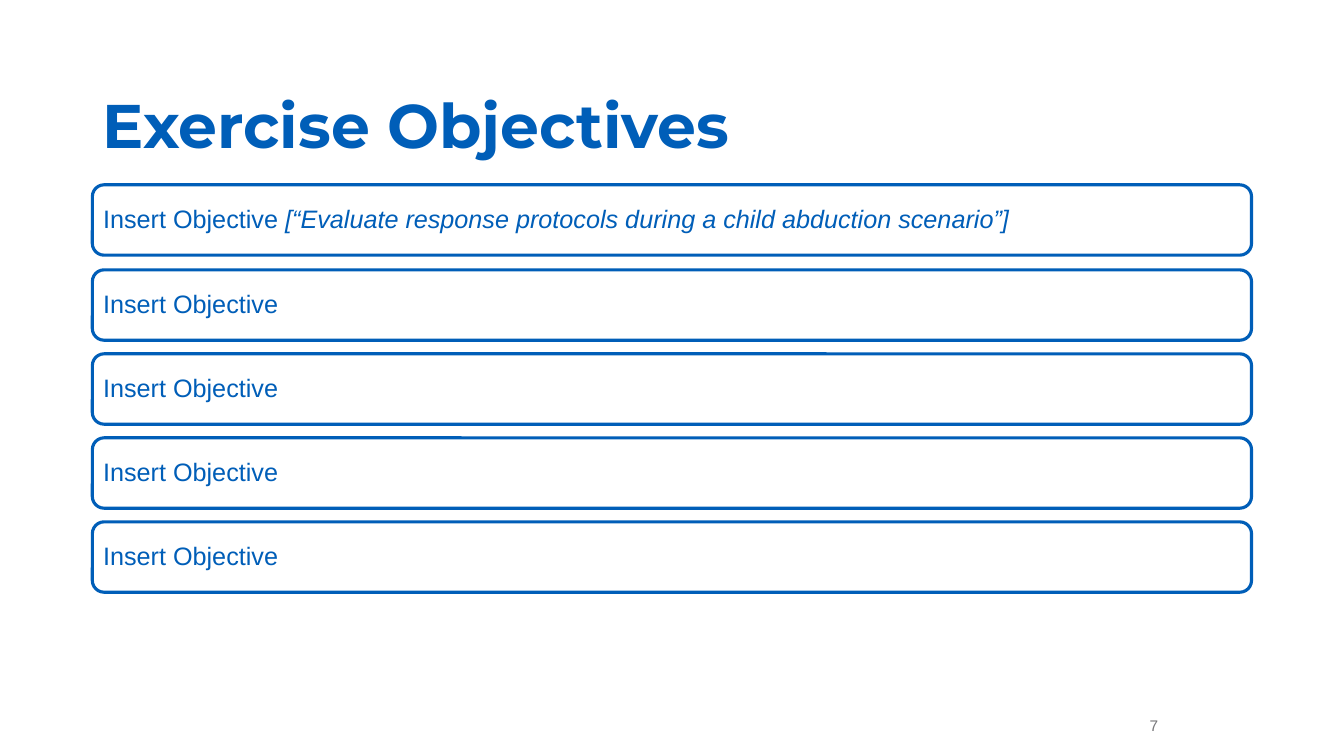
from pptx import Presentation
from pptx.dml.color import RGBColor
from pptx.enum.shapes import MSO_SHAPE as SHAPE
from pptx.enum.text import MSO_ANCHOR as ANCHOR, PP_ALIGN as ALIGN
from pptx.util import Emu, Pt

PX = 9525
BLUE = RGBColor(0x00, 0x5E, 0xB8)
GRAY = RGBColor(0x77, 0x77, 0x7A)
WHITE = RGBColor(0xFF, 0xFF, 0xFF)

LEFT, WIDTH = 88, 1104
FIRST_TOP, SECOND_TOP, PITCH, CARD_HEIGHT = 176, 257, 80, 67
OBJECTIVES = [
    [("Insert Objective ", False),
     ("[“Evaluate response protocols during a child abduction scenario”]", True)],
] + [[("Insert Objective", False)]] * 4


def px(*values):
    return [Emu(v * PX) for v in values]


def add_run(p, text, font, size, color, bold=False, italic=False):
    r = p.add_run()
    r.text = text
    r.font.name = font
    r.font.size = Pt(size)
    r.font.color.rgb = color
    r.font.bold = bold
    r.font.italic = italic


def start_text(sp, align, spacing):
    tf = sp.text_frame
    tf.word_wrap = True
    tf.vertical_anchor = ANCHOR.MIDDLE
    p = tf.paragraphs[0]
    p.alignment = align
    p.line_spacing = spacing
    return p


def add_label(s, box, text, font, size, color, bold=False, align=ALIGN.LEFT, spacing=1.0):
    sp = s.shapes.add_textbox(*px(*box))
    add_run(start_text(sp, align, spacing), text, font, size, color, bold)


def add_objective(s, top, parts):
    sp = s.shapes.add_shape(SHAPE.ROUNDED_RECTANGLE, *px(LEFT, top, WIDTH, CARD_HEIGHT))
    sp.shadow.inherit = False
    sp.fill.solid()
    sp.fill.fore_color.rgb = WHITE
    sp.line.color.rgb = BLUE
    sp.line.width = Pt(2.25)
    p = start_text(sp, ALIGN.LEFT, 0.9)
    tf = sp.text_frame
    tf.margin_left, tf.margin_right = px(7, 7)
    for text, italic in parts:
        add_run(p, text, "Arial", 18, BLUE, italic=italic)


def main():
    prs = Presentation()
    prs.slide_width, prs.slide_height = px(1280, 720)
    s = prs.slides.add_slide(prs.slide_layouts[6])
    add_label(s, (LEFT, 53, WIDTH, 139), "Exercise Objectives",
              "Montserrat", 44, BLUE, bold=True, spacing=0.9)
    add_label(s, (1073, 671, 52, 39), "7", "Arial", 11, GRAY, align=ALIGN.CENTER)
    tops = [FIRST_TOP] + [SECOND_TOP + i * PITCH for i in range(4)]
    for top, parts in zip(tops, OBJECTIVES):
        add_objective(s, top, parts)
    prs.save("out.pptx")


if __name__ == "__main__":
    main()
